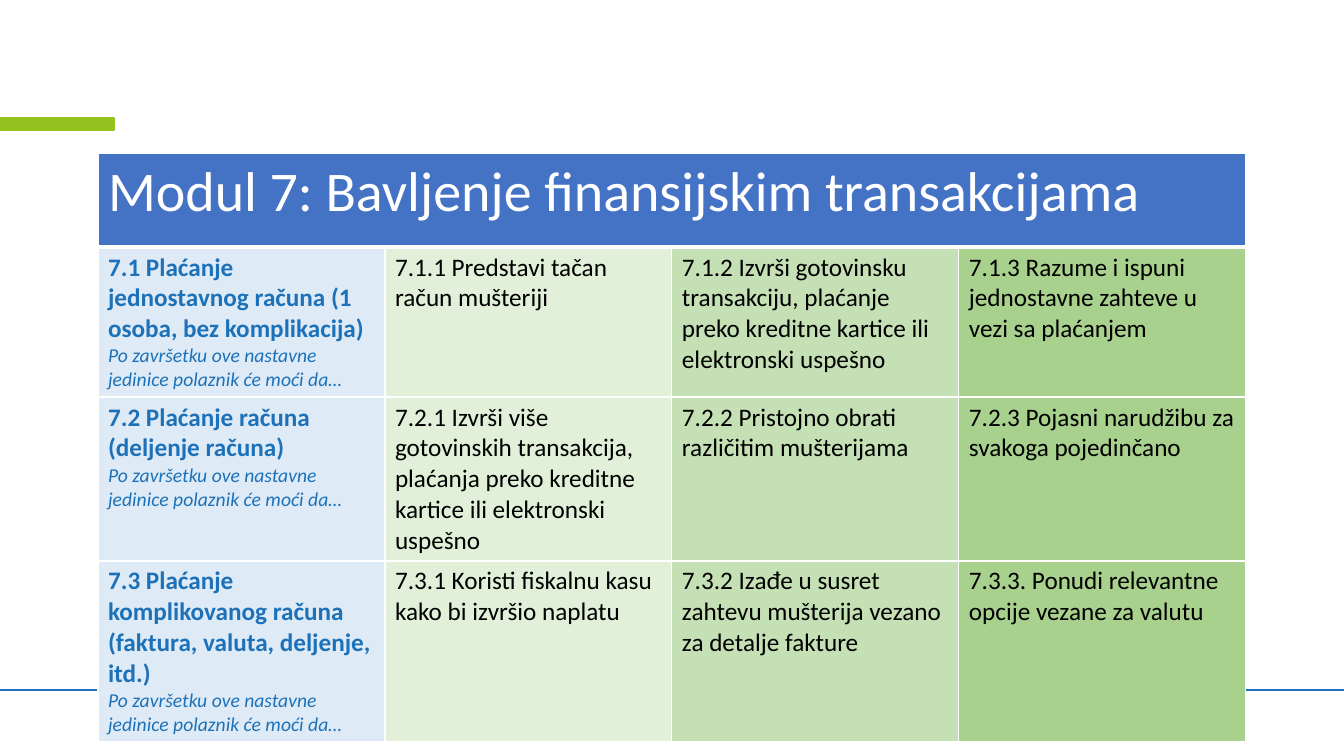
from lxml import etree
from pptx import Presentation
from pptx.dml.color import RGBColor as RGB
from pptx.enum.shapes import MSO_CONNECTOR as CONNECTOR, MSO_SHAPE as SHAPE
from pptx.oxml.ns import qn
from pptx.util import Pt

PX = 914400 / 100.8
COLORS = {
    "white": "FFFFFF", "black": "000000", "blue": "1D71B8", "lime": "95C11F",
    "header": "4472C4", "unit": "DEEBF7",
    "first": "E2F0D9", "second": "C5E0B4", "third": "A9D18E",
}
TITLE = "Modul 7: Bavljenje finansijskim transakcijama"
OUTCOME = "Po završetku ove nastavne jedinice polaznik će moći da…"
UNITS = [
    ["7.1 Plaćanje jednostavnog računa (1 osoba, bez komplikacija)",
     "7.1.1 Predstavi tačan račun mušteriji",
     "7.1.2 Izvrši gotovinsku transakciju, plaćanje preko kreditne kartice ili elektronski uspešno",
     "7.1.3 Razume i ispuni jednostavne zahteve u vezi sa plaćanjem"],
    ["7.2 Plaćanje računa (deljenje računa)",
     "7.2.1 Izvrši više gotovinskih transakcija, plaćanja preko kreditne kartice ili elektronski uspešno",
     "7.2.2 Pristojno obrati različitim mušterijama",
     "7.2.3 Pojasni narudžibu za svakoga pojedinčano"],
    ["7.3 Plaćanje komplikovanog računa (faktura, valuta, deljenje, itd.)",
     "7.3.1 Koristi fiskalnu kasu kako bi izvršio naplatu",
     "7.3.2 Izađe u susret zahtevu mušterija vezano za detalje fakture",
     "7.3.3. Ponudi relevantne opcije vezane za valutu"],
]
COLUMN_FILLS = ["unit", "first", "second", "third"]
ROW_HEIGHTS = [94, 148, 162, 178]
COLUMN_WIDTH = 287


def px(value):
    return round(value * PX)


def write(paragraph, text, size=18, color="black", bold=False, italic=False):
    run = paragraph.add_run()
    run.text = text
    font = run.font
    font.name = "Calibri"
    font.size = Pt(size)
    font.bold = bold
    font.italic = italic
    font.color.rgb = RGB.from_string(COLORS[color])


presentation = Presentation()
presentation.slide_width = px(1344)
presentation.slide_height = px(756)
slide = presentation.slides.add_slide(presentation.slide_layouts[6])

footer_line = slide.shapes.add_connector(CONNECTOR.STRAIGHT, 0, px(690), px(1344), px(690))
footer_line.line.color.rgb = RGB.from_string(COLORS["blue"])
footer_line.line.width = Pt(1)
etree.SubElement(footer_line._element.spPr, qn("a:effectLst"))

accent_bar = slide.shapes.add_shape(SHAPE.RECTANGLE, 0, px(118), px(114), px(12))
accent_bar.shadow.inherit = False
accent_bar.fill.solid()
accent_bar.fill.fore_color.rgb = RGB.from_string(COLORS["lime"])
accent_bar.line.color.rgb = RGB.from_string(COLORS["lime"])
accent_bar.line.width = Pt(1)

table = slide.shapes.add_table(
    len(ROW_HEIGHTS), len(COLUMN_FILLS), px(98), px(153),
    px(COLUMN_WIDTH * len(COLUMN_FILLS)), px(sum(ROW_HEIGHTS))).table
table.first_row = False
table.horz_banding = False
for column in table.columns:
    column.width = px(COLUMN_WIDTH)

for row_index, height in enumerate(ROW_HEIGHTS):
    table.rows[row_index].height = px(height)
    for column_index, column_fill in enumerate(COLUMN_FILLS):
        cell = table.cell(row_index, column_index)
        properties = cell._tc.get_or_add_tcPr()
        for side in ("lnL", "lnR", "lnT", "lnB"):
            width = 3 if row_index == 0 and side == "lnB" else 1
            border = etree.SubElement(properties, qn(f"a:{side}"), w=str(Pt(width)))
            border_fill = etree.SubElement(border, qn("a:solidFill"))
            etree.SubElement(border_fill, qn("a:srgbClr"), val=COLORS["white"])
        cell.fill.solid()
        cell.fill.fore_color.rgb = RGB.from_string(
            COLORS["header" if row_index == 0 else column_fill])

table.cell(0, 0).merge(table.cell(0, len(COLUMN_FILLS) - 1))
write(table.cell(0, 0).text_frame.paragraphs[0], TITLE, size=40, color="white")

for row_index, (unit, *skills) in enumerate(UNITS, start=1):
    unit_frame = table.cell(row_index, 0).text_frame
    write(unit_frame.paragraphs[0], unit, color="blue", bold=True)
    write(unit_frame.add_paragraph(), OUTCOME, size=14, color="blue", italic=True)
    for column_index, skill in enumerate(skills, start=1):
        write(table.cell(row_index, column_index).text_frame.paragraphs[0], skill)

presentation.save("out.pptx")
